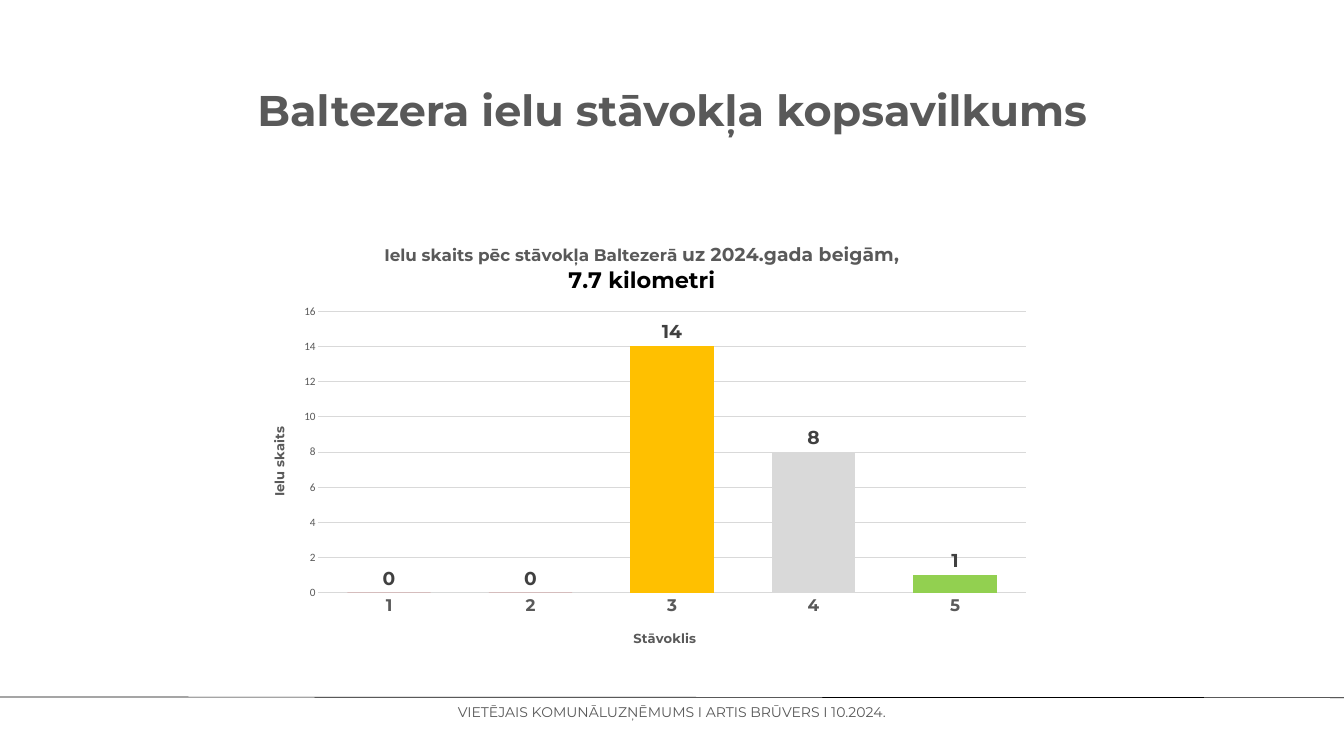
from dataclasses import dataclass

from lxml.etree import SubElement
from pptx import Presentation
from pptx.chart.data import CategoryChartData as ChartData
from pptx.dml.color import RGBColor as RGB
from pptx.enum.chart import XL_CHART_TYPE as Kind
from pptx.enum.chart import XL_LABEL_POSITION as Spot
from pptx.enum.chart import XL_TICK_MARK as Tick
from pptx.enum.shapes import MSO_CONNECTOR as Link
from pptx.enum.text import MSO_ANCHOR as Anchor
from pptx.enum.text import PP_ALIGN as Align
from pptx.oxml import parse_xml
from pptx.oxml.ns import nsdecls, qn
from pptx.util import Pt


@dataclass(frozen=True)
class Theme:
    head: str = "Montserrat"
    plain: str = "Calibri"
    grey: str = "595959"
    dark: str = "404040"
    black: str = "000000"
    grid: str = "D9D9D9"
    base: str = "4472C4"
    bars: tuple = ("C00000", "C00000", "FFC000", "D9D9D9", "92D050")
    title: int = 46
    note: int = 15
    axis: int = 14
    tick: int = 12
    cat: int = 18
    label: int = 20
    big: int = 24


THEME = Theme()
WIDE, HIGH = 1440, 810


def style(font, size, color=THEME.grey, bold=False, name=THEME.head):
    font.size, font.bold, font.name = Pt(size), bold, name
    font.color.rgb = RGB.from_string(color)


def paint(fill, color):
    fill.solid()
    fill.fore_color.rgb = RGB.from_string(color)


def set_layout(part, index, inner=False, **spots):
    """Place a chart part by fractions of the chart's size."""
    for old in part.findall(qn("c:layout")):
        part.remove(old)
    layout = parse_xml(f"<c:layout {nsdecls('c')}><c:manualLayout/></c:layout>")
    if inner:
        SubElement(layout[0], qn("c:layoutTarget")).set("val", "inner")
    for key in "xy":
        SubElement(layout[0], qn(f"c:{key}Mode")).set("val", "edge")
    for key, value in spots.items():
        SubElement(layout[0], qn(f"c:{key}")).set("val", str(value))
    part.insert(index, layout)


def add_title(slide, box):
    title = slide.shapes.title
    title.left, title.top, title.width, title.height = map(Pt, box)
    frame = title.text_frame
    frame.text = "Baltezera ielu stāvokļa kopsavilkums"
    frame.vertical_anchor = Anchor.MIDDLE
    para = frame.paragraphs[0]
    para.alignment, para.line_spacing = Align.CENTER, 0.9
    style(para.runs[0].font, THEME.title, bold=True)


def name_chart(chart):
    title = chart.chart_title
    first = title.text_frame.paragraphs[0]
    second = title.text_frame.add_paragraph()
    for para, text, size, color in (
        (first, "Ielu skaits pēc stāvokļa Baltezerā ", THEME.cat, THEME.grey),
        (first, "uz 2024.gada beigām,", THEME.label, THEME.grey),
        (second, "7.7 kilometri", THEME.big, THEME.black),
    ):
        run = para.add_run()
        run.text = text
        style(run.font, size, color, True)
    set_layout(title._element, 1, x=0.165, y=0.03)


def name_axis(axis, text, x, y):
    axis.major_tick_mark = axis.minor_tick_mark = Tick.NONE
    axis.format.line.fill.background()
    title = axis.axis_title
    title.text_frame.text = text
    style(title.text_frame.paragraphs[0].runs[0].font, THEME.axis, bold=True)
    set_layout(title._element, 1, x=x, y=y)


def add_bars(slide, box):
    data = ChartData()
    data.categories = ["1", "2", "3", "4", "5"]
    data.add_series("Series 1", (0, 0, 14, 8, 1))
    chart = slide.shapes.add_chart(Kind.COLUMN_CLUSTERED, *map(Pt, box), data).chart
    style(chart.font, 10, THEME.black, name=THEME.plain)
    chart.has_legend = False
    name_chart(chart)
    set_layout(chart._chartSpace.chart.plotArea, 0, inner=True,
               x=0.084, y=0.194, w=0.896, h=0.651)

    # Axes
    cats, vals = chart.category_axis, chart.value_axis
    name_axis(cats, "Stāvoklis", 0.48, 0.925)
    name_axis(vals, "Ielu skaits", 0.02, 0.455)
    turn = vals.axis_title.text_frame._txBody.bodyPr
    turn.set("rot", "-5400000")
    turn.set("vert", "horz")
    style(cats.tick_labels.font, THEME.cat, bold=True)
    style(vals.tick_labels.font, THEME.tick, name=THEME.plain)
    vals.minimum_scale, vals.maximum_scale, vals.major_unit = 0, 16, 2
    line = vals.major_gridlines.format.line
    line.width = Pt(0.75)
    paint(line.fill, THEME.grid)

    # Bars and their values
    plot = chart.plots[0]
    plot.gap_width, plot.vary_by_categories = 70, False
    series = plot.series[0]
    paint(series.format.fill, THEME.base)
    for i, color in enumerate(THEME.bars):
        paint(series.points[i].format.fill, color)
    labels = series.data_labels
    labels.show_value, labels.position = True, Spot.OUTSIDE_END
    style(labels.font, THEME.label, THEME.dark, True)


def add_footer(slide, box):
    left, top, width, height = box
    # Rule across the slide
    rule = slide.shapes.add_connector(
        Link.STRAIGHT, Pt(left), Pt(top), Pt(left + width), Pt(top + 0.7))
    rule.line.width = Pt(0.75)
    rule.line.color.rgb = RGB.from_string(THEME.black)
    SubElement(rule._element.spPr, qn("a:effectLst"))
    # Credit line
    note = slide.shapes.add_textbox(
        Pt(left + 7.2), Pt(top + 7), Pt(width - 14.4), Pt(height - 7))
    frame = note.text_frame
    frame.word_wrap = True
    frame.margin_left = frame.margin_right = 0
    frame.margin_top = frame.margin_bottom = 0
    frame.text = "VIETĒJAIS KOMUNĀLUZŅĒMUMS I ARTIS BRŪVERS I 10.2024."
    para = frame.paragraphs[0]
    para.alignment, para.line_spacing = Align.CENTER, Pt(18)
    style(para.runs[0].font, THEME.note)


def main():
    deck = Presentation()
    deck.slide_width, deck.slide_height = Pt(WIDE), Pt(HIGH)
    slide = deck.slides.add_slide(deck.slide_layouts[5])
    add_title(slide, (99, 43, 1242, 156))
    add_bars(slide, (270, 243.5, 846, 463.5))
    add_footer(slide, (0, 746.8, WIDE, 25))
    deck.save("out.pptx")


if __name__ == "__main__":
    main()
